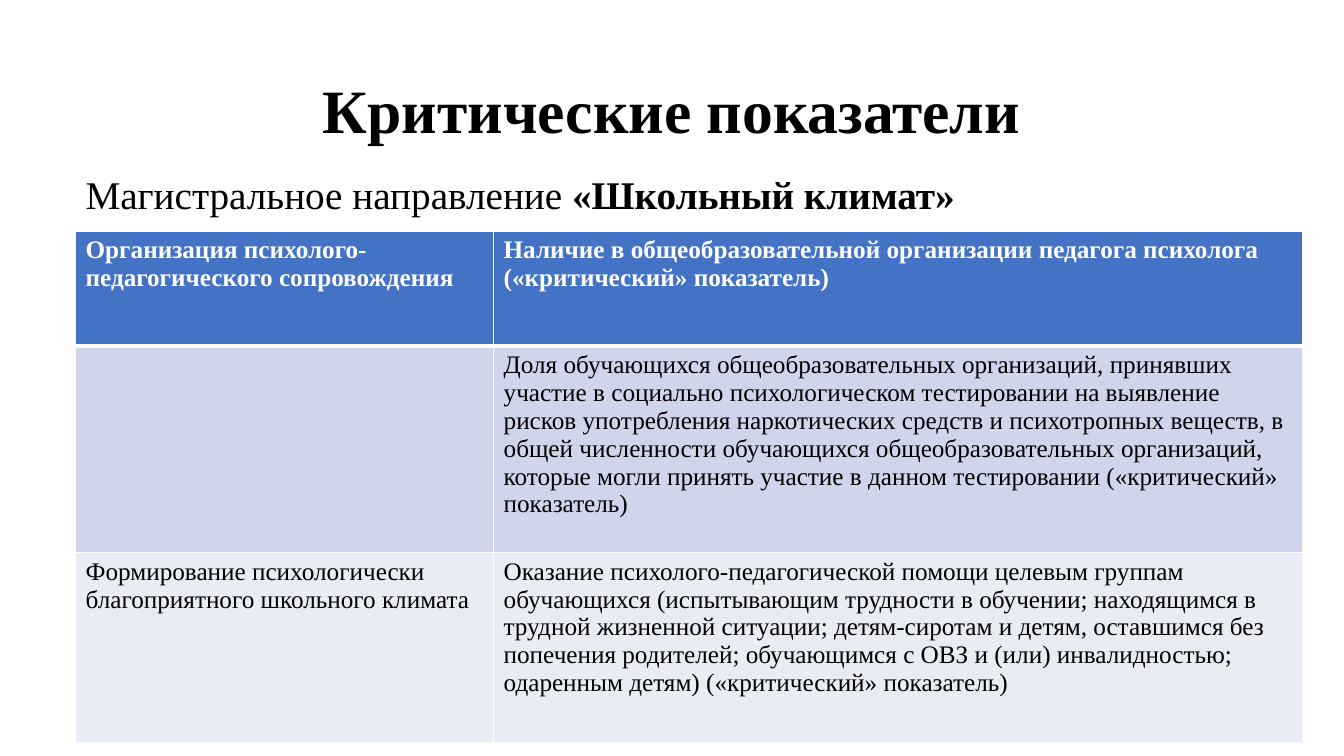
from dataclasses import dataclass

from lxml.etree import SubElement
from pptx import Presentation
from pptx.dml.color import RGBColor as Color
from pptx.enum.text import MSO_ANCHOR as Anchor, MSO_AUTO_SIZE as AutoSize, PP_ALIGN as Align
from pptx.oxml.ns import qn
from pptx.util import Pt


@dataclass(frozen=True)
class Theme:
    font: str = "Times New Roman"
    title_size: int = 44
    lead_size: int = 28
    cell_size: int = 18
    ink: str = "000000"
    paper: str = "FFFFFF"
    header: str = "4472C4"
    bands: tuple = ("CFD5EA", "E9EBF5")
    rule: int = 1
    header_rule: int = 3


COLUMN_WIDTHS = (298.6, 577.8)
ROW_HEIGHTS = (82.1, 147.6, 135.4)
INDICATORS = (
    ("Организация психолого-педагогического сопровождения",
     "Наличие в общеобразовательной организации педагога психолога "
     "(«критический» показатель)"),
    ("",
     "Доля обучающихся общеобразовательных организаций, принявших участие "
     "в социально психологическом тестировании на выявление рисков употребления "
     "наркотических средств и психотропных веществ, в общей численности обучающихся "
     "общеобразовательных организаций, которые могли принять участие в данном "
     "тестировании («критический» показатель)"),
    ("Формирование психологически благоприятного школьного климата",
     "Оказание психолого-педагогической помощи целевым группам обучающихся "
     "(испытывающим трудности в обучении; находящимся в трудной жизненной ситуации; "
     "детям-сиротам и детям, оставшимся без попечения родителей; обучающимся с ОВЗ "
     "и (или) инвалидностью; одаренным детям) («критический» показатель)"),
)


class PageBuilder:
    def __init__(self, page, theme):
        self.page = page
        self.theme = theme

    def add_span(self, para, text, size, color, bold=False):
        span = para.add_run()
        span.text = text
        span.font.name = self.theme.font
        span.font.size = Pt(size)
        span.font.bold = bold
        span.font.color.rgb = Color.from_string(color)

    def title(self, text, left, top, width, height):
        box = self.page.shapes.title
        box.left, box.top, box.width, box.height = map(Pt, (left, top, width, height))
        frame = box.text_frame
        frame.auto_size = AutoSize.NONE
        frame.vertical_anchor = Anchor.MIDDLE
        para = frame.paragraphs[0]
        para.alignment = Align.CENTER
        para.line_spacing = 0.9
        self.add_span(para, text, self.theme.title_size, self.theme.ink, True)

    def lead(self, spans, left, top, width, height):
        box = self.page.shapes.add_textbox(*map(Pt, (left, top, width, height)))
        box.text_frame.word_wrap = True
        para = box.text_frame.paragraphs[0]
        para.line_spacing = 0.9
        para.space_before = Pt(10)
        for text, bold in spans:
            self.add_span(para, text, self.theme.lead_size, self.theme.ink, bold)

    def table(self, rows, widths, heights, left, top):
        frame = self.page.shapes.add_table(
            len(rows), len(widths), Pt(left), Pt(top), Pt(sum(widths)), Pt(sum(heights)))
        table = frame.table
        for column, width in zip(table.columns, widths):
            column.width = Pt(width)
        for index, (row, height) in enumerate(zip(table.rows, heights)):
            row.height = Pt(height)
            for cell, text in zip(row.cells, rows[index]):
                self.fill_cell(cell, text, index)

    def fill_cell(self, cell, text, row):
        theme = self.theme
        is_header = row == 0
        fill = theme.header if is_header else theme.bands[(row - 1) % len(theme.bands)]
        # Borders come before the fill in the cell properties
        top = theme.header_rule if row == 1 else theme.rule
        bottom = theme.header_rule if is_header else theme.rule
        self.border_cell(cell, L=theme.rule, R=theme.rule, T=top, B=bottom)
        cell.fill.solid()
        cell.fill.fore_color.rgb = Color.from_string(fill)
        para = cell.text_frame.paragraphs[0]
        para.font.size = Pt(theme.cell_size)
        if text:
            ink = theme.paper if is_header else theme.ink
            self.add_span(para, text, theme.cell_size, ink, is_header)

    def border_cell(self, cell, **sides):
        properties = cell._tc.get_or_add_tcPr()
        for side, weight in sides.items():
            line = SubElement(properties, qn(f"a:ln{side}"), w=str(Pt(weight)))
            solid = SubElement(line, qn("a:solidFill"))
            SubElement(solid, qn("a:srgbClr"), val=self.theme.paper)


def main():
    deck = Presentation()
    deck.slide_width, deck.slide_height = Pt(960), Pt(540)
    page = deck.slides.add_slide(deck.slide_layouts[5])
    builder = PageBuilder(page, Theme())

    # Heading and lead line
    builder.title("Критические показатели", 66, 28.75, 828, 104.4)
    builder.lead((("Магистральное направление ", False), ("«Школьный климат»", True)),
                 54, 121.7, 876.4, 40)

    # Table of indicators
    builder.table(INDICATORS, COLUMN_WIDTHS, ROW_HEIGHTS, 54, 165)

    deck.save("out.pptx")


if __name__ == "__main__":
    main()
